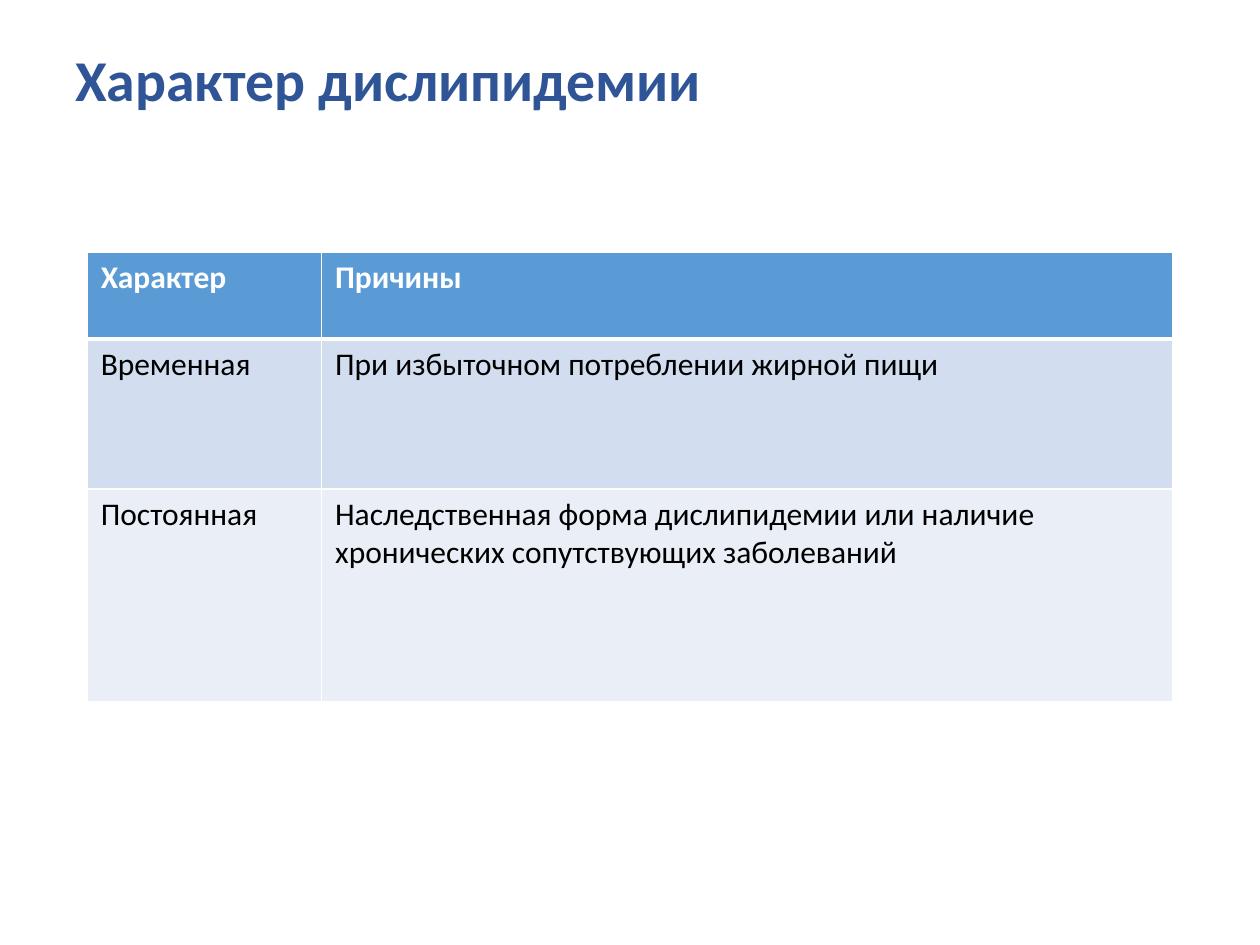
from lxml import etree
from pptx import Presentation, util as u
from pptx.dml.color import RGBColor
from pptx.enum import text
from pptx.oxml import ns

HUES = {"title": "2F5597", "head": "5B9BD5", "odd": "D2DEEF",
        "even": "EAEFF7", "white": "FFFFFF", "black": "000000"}
ROWS = [
    ("Характер", "Причины"),
    ("Временная", "При избыточном потреблении жирной пищи"),
    ("Постоянная", "Наследственная форма дислипидемии или наличие "
                   "хронических сопутствующих заболеваний"),
]
WIDTHS = (1.86, 6.76)
HEIGHTS = (0.69, 1.19, 1.69)
BANDS = ("head", "odd", "even")


def hue(name):
    return RGBColor.from_string(HUES[name])


def put(item, values):
    for name, value in values.items():
        setattr(item, name, value)


def style(par, size, bold, color):
    par.alignment = text.PP_ALIGN.LEFT
    font = par.runs[0].font
    put(font, {"name": "Calibri", "size": u.Pt(size), "bold": bold})
    font.color.rgb = hue(color)


def place(item, box):
    names = ("left", "top", "width", "height")
    put(item, dict(zip(names, map(u.Inches, box))))


def edge(cell, side, width):
    line = etree.SubElement(cell._tc.get_or_add_tcPr(), ns.qn("a:ln" + side),
                            w=str(u.Pt(width)))
    fill = etree.SubElement(line, ns.qn("a:solidFill"))
    etree.SubElement(fill, ns.qn("a:srgbClr"), val=HUES["white"])


def add_title(slide, box):
    title = slide.shapes.title
    place(title, box)
    frame = title.text_frame
    frame.text = "Характер дислипидемии"
    put(frame, {"word_wrap": True, "auto_size": text.MSO_AUTO_SIZE.NONE,
                "vertical_anchor": text.MSO_ANCHOR.MIDDLE})
    par = frame.paragraphs[0]
    par.line_spacing = 0.9
    style(par, 33, True, "title")


def fill_cell(cell, words, row):
    head = row == 0
    cell.text = words
    put(cell, {"margin_left": u.Inches(0.11), "margin_right": u.Inches(0.11),
               "margin_top": u.Inches(0.05), "margin_bottom": u.Inches(0.05),
               "vertical_anchor": text.MSO_ANCHOR.TOP})
    style(cell.text_frame.paragraphs[0], 18, head, "white" if head else "black")
    for side in "LRTB":
        thick = (head and side == "B") or (row == 1 and side == "T")
        edge(cell, side, 3 if thick else 1)
    cell.fill.solid()
    cell.fill.fore_color.rgb = hue(BANDS[row])


def add_causes(slide, box):
    frame = slide.shapes.add_table(len(ROWS), len(WIDTHS), *map(u.Inches, box))
    table = frame.table
    for col, width in zip(table.columns, WIDTHS):
        col.width = u.Inches(width)
    for row, height in zip(table.rows, HEIGHTS):
        row.height = u.Inches(height)
    for r, row in enumerate(ROWS):
        for c, words in enumerate(row):
            fill_cell(table.cell(r, c), words, r)


def main():
    deck = Presentation()
    put(deck, {"slide_width": u.Inches(10), "slide_height": u.Inches(7.5)})
    slide = deck.slides.add_slide(deck.slide_layouts[5])
    add_title(slide, (0.5, 0.3, 8.17, 0.72))
    add_causes(slide, (0.69, 2, sum(WIDTHS), sum(HEIGHTS)))
    deck.save("out.pptx")


if __name__ == "__main__":
    main()
